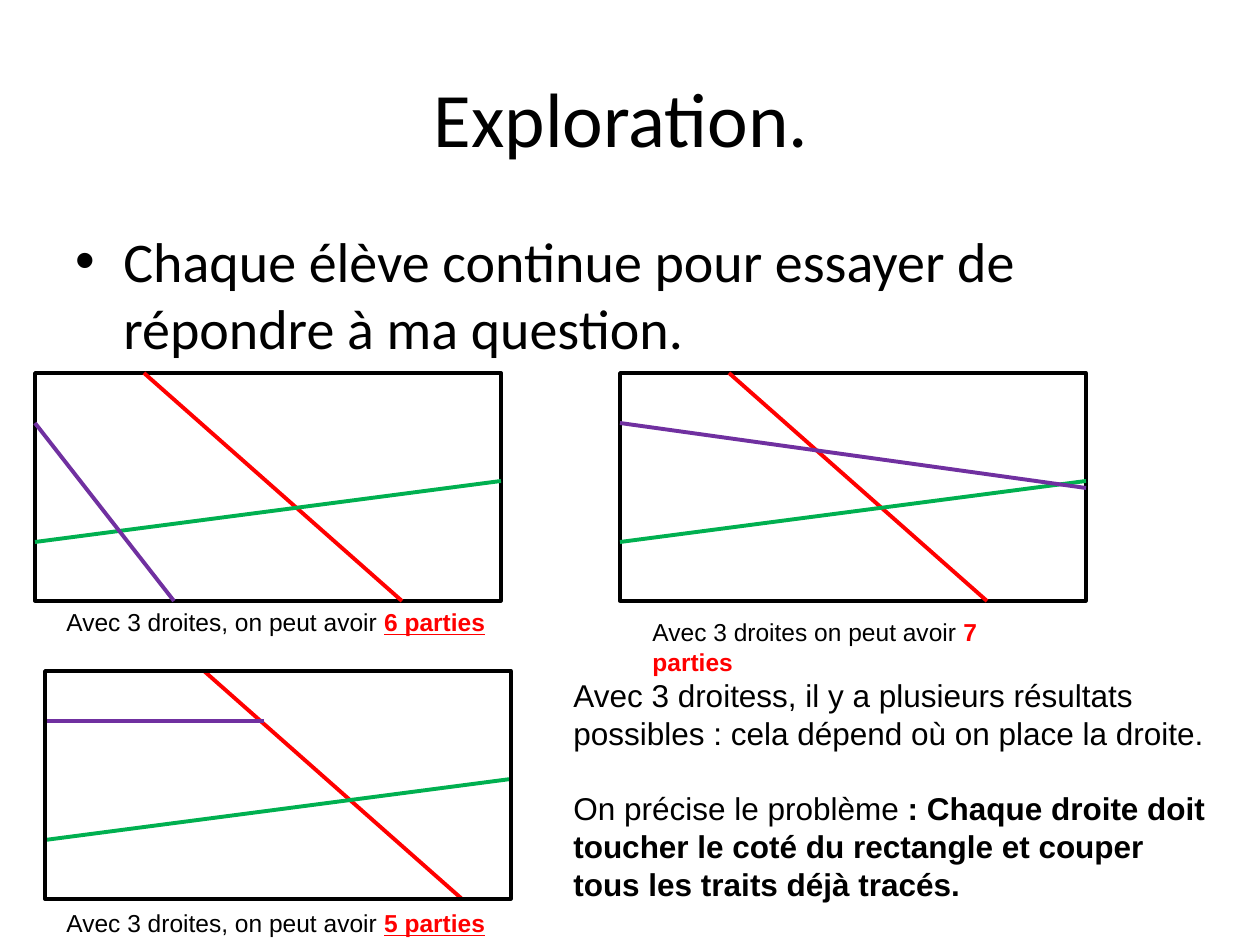
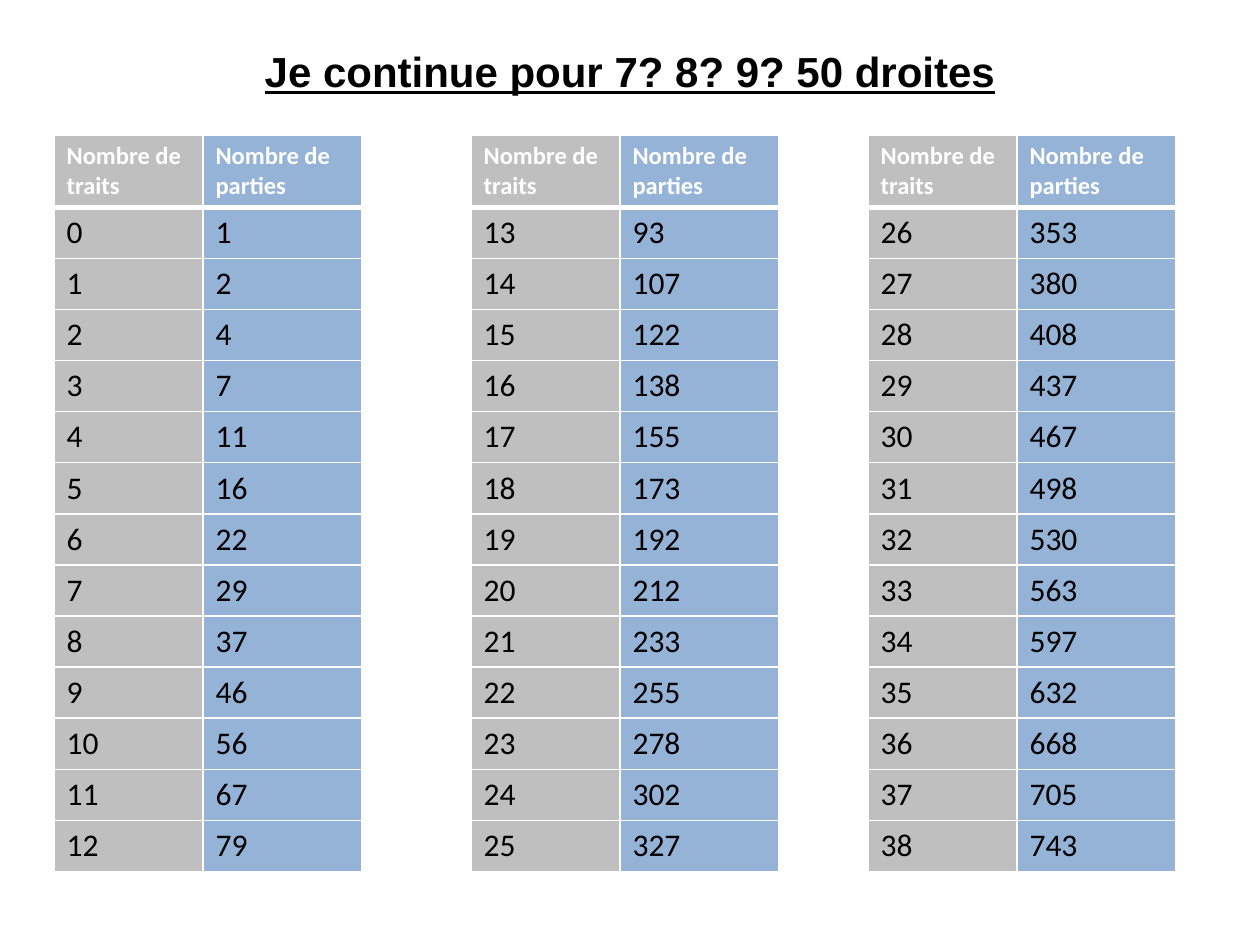
from lxml.etree import SubElement as Sub
from pptx import Presentation
from pptx.dml.color import RGBColor as Rgb
from pptx.enum.shapes import MSO_CONNECTOR as Conn, MSO_SHAPE as Shape
from pptx.enum.text import MSO_ANCHOR as Anchor, MSO_AUTO_SIZE as Auto, PP_ALIGN as Align
from pptx.oxml.ns import qn
from pptx.util import Emu, Pt

HUES = {
    "black": "000000", "white": "FFFFFF", "red": "FF0000", "green": "00B050",
    "violet": "7030A0", "grey": "BFBFBF", "blue": "95B3D7",
}
SCALE = 914400 / 126
WIDE, HIGH = 466, 228  # frame size
ROWS = 13  # counts per table
COLS = ((149, "grey", "Nombre de traits"), (159, "blue", "Nombre de parties"))


def px(num):
    return Emu(round(num * SCALE))


def hue(name):
    return Rgb.from_string(HUES[name])


def add_run(para, text, size, font="Arial", color="black", bold=False, under=False):
    run = para.add_run()
    run.text = text
    face = run.font
    face.name, face.size, face.bold, face.underline = font, Pt(size), bold, under
    face.color.rgb = hue(color)


def add_box(slide, x, y, w, h, grow=True):
    frame = slide.shapes.add_textbox(px(x), px(y), px(w), px(h)).text_frame
    frame.word_wrap = True
    frame.auto_size = Auto.SHAPE_TO_FIT_TEXT if grow else Auto.NONE
    return frame


def add_title(slide, y, h, text, size, **look):
    frame = add_box(slide, 63, y, 1134, h, grow=False)
    frame.vertical_anchor = Anchor.MIDDLE
    para = frame.paragraphs[0]
    para.alignment = Align.CENTER
    add_run(para, text, size, **look)


def add_bullet(slide, text):
    para = add_box(slide, 63, 220, 1134, 624, grow=False).paragraphs[0]
    para.space_before = Pt(6.4)
    props = para._p.get_or_add_pPr()
    props.set("marL", str(px(48)))
    props.set("indent", str(px(-48)))
    Sub(props, qn("a:buFont"), typeface="Arial")
    Sub(props, qn("a:buChar"), char="•")
    add_run(para, text, 32, font="Calibri")


def add_line(slide, start, end, color):
    line = slide.shapes.add_connector(Conn.STRAIGHT, *map(px, start + end))
    line.line.color.rgb = hue(color)
    line.line.width = Pt(2.25)
    Sub(line._element.spPr, qn("a:effectLst"))


def add_frame(slide, x, y):
    rect = slide.shapes.add_shape(Shape.RECTANGLE, px(x), px(y), px(WIDE), px(HIGH))
    rect.shadow.inherit = False
    rect.fill.background()
    rect.line.color.rgb = hue("black")
    rect.line.width = Pt(2)


def add_figure(slide, x, y, red, third, front=False):
    """Draw a rectangle cut by three lines; red and third place two of them."""
    if not front:
        add_frame(slide, x, y)
    cuts = (
        ("red", (red, 0), (red + 258, HIGH)),
        ("green", (0, 169), (WIDE, 108)),
        ("violet", third, (0, 50)),
    )
    for color, (x1, y1), (x2, y2) in cuts:
        add_line(slide, (x + x1, y + y1), (x + x2, y + y2), color)
    if front:
        add_frame(slide, x, y)


def add_note(slide, x, y, w, lead, count, under=True):
    para = add_box(slide, x, y, w, 43).paragraphs[0]
    add_run(para, lead, 14)
    add_run(para, count, 14, color="red", bold=True, under=under)


def add_summary(slide):
    frame = add_box(slide, 561, 670, 665, 242)
    add_run(frame.paragraphs[0], "Avec 3 droitess, il y a plusieurs résultats possibles : "
            "cela dépend où on place la droite.", 18)
    para = frame.add_paragraph()
    para.space_before = Pt(21.5)
    add_run(para, "On précise le problème ", 18)
    add_run(para, ": Chaque droite doit toucher le coté du rectangle et couper "
            "tous les traits déjà tracés.", 18, bold=True)


def set_edges(cell, top, base):
    props = cell._tc.get_or_add_tcPr()
    for side, width in (("L", 1), ("R", 1), ("T", top), ("B", base)):
        edge = Sub(props, qn(f"a:ln{side}"), w=str(Pt(width)))
        Sub(Sub(edge, qn("a:solidFill")), qn("a:srgbClr"), val=HUES["white"])


def count_parts(lines):
    # The listed values run one higher from the second table on.
    return 1 + lines * (lines + 1) // 2 + (lines >= ROWS)


def add_counts(slide, x, first):
    width = sum(col[0] for col in COLS)
    table = slide.shapes.add_table(
        ROWS + 1, len(COLS), px(x), px(135), px(width), px(735)).table
    table.horz_banding = False
    nums = range(first, first + ROWS)
    rows = [[col[2] for col in COLS]] + [[n, count_parts(n)] for n in nums]
    for col, (wide, _, _) in zip(table.columns, COLS):
        col.width = px(wide)
    for i, row in enumerate(rows):
        head = i == 0
        table.rows[i].height = px(72 if head else 51)
        for j, value in enumerate(row):
            cell = table.cell(i, j)
            set_edges(cell, 3 if i == 1 else 1, 3 if head else 1)
            cell.fill.solid()
            cell.fill.fore_color.rgb = hue(COLS[j][1])
            add_run(cell.text_frame.paragraphs[0], str(value), 14 if head else 18,
                    "Calibri", "white" if head else "black", bold=head)


def fill_first(slide):
    add_title(slide, 38, 157, "Exploration. ", 44, font="Calibri")
    add_bullet(slide, "Chaque élève continue pour essayer de répondre à ma question.")
    add_figure(slide, 35, 373, 109, (139, HIGH))
    add_figure(slide, 620, 373, 109, (WIDE, 115))
    add_figure(slide, 45, 671, 159, (219, 50), front=True)
    add_note(slide, 54, 601, 466, "Avec 3 droites, on peut avoir ", "6 parties")
    add_note(slide, 640, 611, 436, "Avec 3 droites on peut avoir ", "7 parties", under=False)
    add_note(slide, 54, 902, 476, "Avec 3 droites, on peut avoir ", "5 parties")
    add_summary(slide)


def fill_second(slide):
    add_title(slide, 37, 68, "Je continue pour 7? 8? 9? 50 droites", 24, bold=True, under=True)
    for k, x in enumerate((54, 471, 868)):
        add_counts(slide, x, k * ROWS)


def main():
    deck = Presentation()
    deck.slide_width, deck.slide_height = px(1260), px(945)
    for fill in (fill_first, fill_second):
        fill(deck.slides.add_slide(deck.slide_layouts[6]))
    deck.save("out.pptx")


if __name__ == "__main__":
    main()
